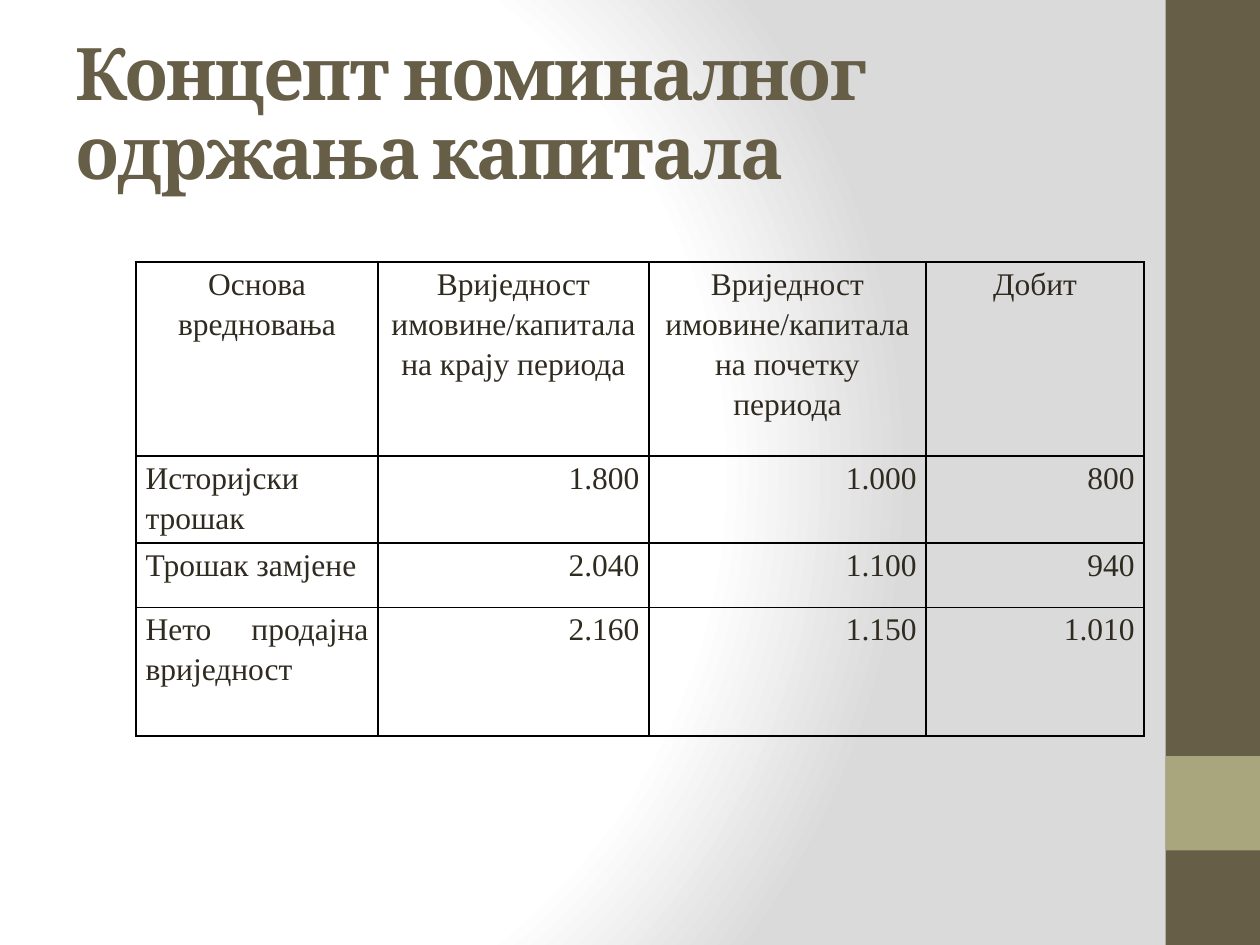
from lxml import etree
from pptx import Presentation
from pptx import util as u
from pptx.dml import color
from pptx.enum import shapes, text
from pptx.oxml import ns, parse_xml

BROWN, OLIVE, INK, BLACK = "675E47", "A9A57C", "2F2B20", "000000"
ALIGN = text.PP_ALIGN
COLUMN_WIDTHS = [138.2, 154.8, 158.4, 124.6]
ROW_HEIGHTS = [110.9, 36.7, 36.7, 73.4]
ROWS = [
    ["Основа вредновања", "Вриједност имовине/капитала на крају периода",
     "Вриједност имовине/капитала на почетку периода", "Добит"],
    ["Историјски трошак", "1.800", "1.000", "800"],
    ["Трошак замјене", "2.040", "1.100", "940"],
    ["Нето продајна вриједност", "2.160", "1.150", "1.010"],
]


def rgb(value):
    return color.RGBColor.from_string(value)


def write(frame, content, font="Times New Roman", size=18, ink=INK, bold=False,
          align=ALIGN.LEFT, line_spacing=1.0, space_after=0, tracking=0):
    frame.word_wrap = True
    paragraph = frame.paragraphs[0]
    paragraph.alignment = align
    paragraph.line_spacing = line_spacing
    paragraph.space_after = u.Pt(space_after)
    run = paragraph.add_run()
    run.text = content
    run.font.name = font
    run.font.size = u.Pt(size)
    run.font.bold = bold
    run.font.color.rgb = rgb(ink)
    if tracking:
        run.font._element.set("spc", str(round(tracking * 100)))


def set_background(slide):
    stops = "".join(
        f'<a:gs pos="{position * 1000}"><a:srgbClr val="{value}"/></a:gs>'
        for position, value in [(0, "FFFFFF"), (75, "FFFFFF"), (100, "DADADA")])
    background = parse_xml(
        f'<p:bg {ns.nsdecls("p", "a")}><p:bgPr><a:gradFill rotWithShape="1">'
        f'<a:gsLst>{stops}</a:gsLst><a:path path="circle">'
        '<a:fillToRect l="20000" t="50000" r="100000" b="50000"/></a:path>'
        '</a:gradFill><a:effectLst/></p:bgPr></p:bg>')
    slide.element.cSld.insert(0, background)


def add_band(slide, left, top, width, height, fill):
    shape = slide.shapes.add_shape(
        shapes.MSO_SHAPE.RECTANGLE, u.Pt(left), u.Pt(top), u.Pt(width), u.Pt(height))
    shape.shadow.inherit = False
    shape.fill.solid()
    shape.fill.fore_color.rgb = rgb(fill)
    shape.line.fill.background()


def add_title(slide, content):
    box = slide.shapes.add_textbox(u.Pt(36), u.Pt(21.6), u.Pt(600), u.Pt(90))
    box.text_frame.vertical_anchor = text.MSO_ANCHOR.MIDDLE
    write(box.text_frame, content, font="Cambria", size=41.4, ink=BROWN,
          bold=True, line_spacing=0.9, tracking=-1)


def set_borders(cell, ink, width):
    properties = cell._tc.get_or_add_tcPr()
    for index, side in enumerate(["lnL", "lnR", "lnT", "lnB"]):
        line = etree.Element(ns.qn(f"a:{side}"), w=str(u.Pt(width)))
        fill = etree.SubElement(line, ns.qn("a:solidFill"))
        etree.SubElement(fill, ns.qn("a:srgbClr"), val=ink)
        properties.insert(index, line)


def cell_alignment(row, column):
    if row == 0:
        return ALIGN.CENTER
    return ALIGN.JUSTIFY if column == 0 else ALIGN.RIGHT


def add_value_table(slide):
    table = slide.shapes.add_table(
        len(ROWS), len(COLUMN_WIDTHS), u.Pt(77.8), u.Pt(149.8),
        u.Pt(sum(COLUMN_WIDTHS)), u.Pt(sum(ROW_HEIGHTS))).table
    table.first_row = table.horz_banding = False
    for column, width in zip(table.columns, COLUMN_WIDTHS):
        column.width = u.Pt(width)
    for row, height in zip(table.rows, ROW_HEIGHTS):
        row.height = u.Pt(height)
    for row, values in enumerate(ROWS):
        for column, value in enumerate(values):
            cell = table.cell(row, column)
            cell.margin_left = cell.margin_right = u.Pt(5.4)
            cell.margin_top = cell.margin_bottom = 0
            cell.fill.background()
            set_borders(cell, BLACK, 1)
            write(cell.text_frame, value, align=cell_alignment(row, column),
                  line_spacing=1.15, space_after=6)


def main():
    presentation = Presentation()
    presentation.slide_width = u.Pt(720)
    presentation.slide_height = u.Pt(540)
    slide = presentation.slides.add_slide(presentation.slide_layouts[6])
    set_background(slide)
    add_band(slide, 666, 0, 54, 540, BROWN)
    add_band(slide, 666, 432, 54, 54, OLIVE)
    add_title(slide, "Концепт номиналног одржања капитала")
    add_value_table(slide)
    presentation.save("out.pptx")


if __name__ == "__main__":
    main()
